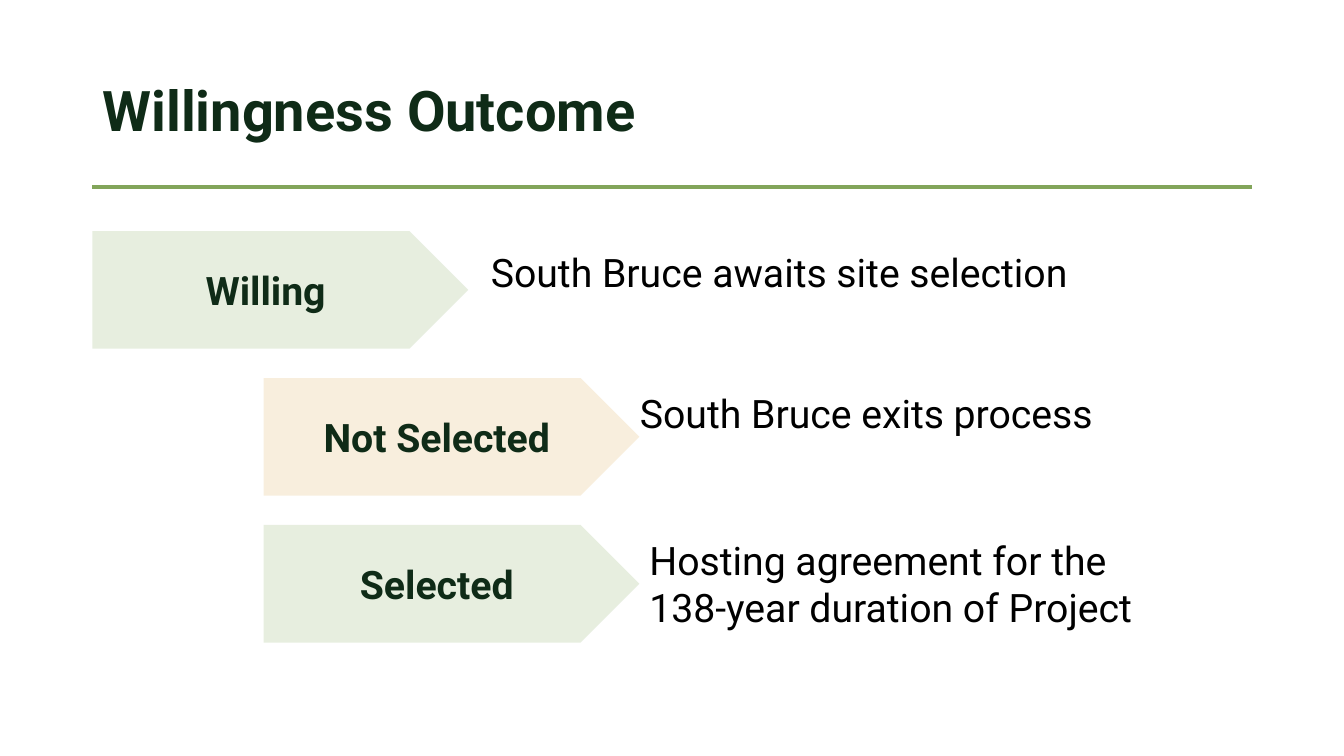
from lxml.etree import SubElement
from pptx import Presentation
from pptx.dml.color import RGBColor
from pptx.enum.shapes import MSO_CONNECTOR, MSO_SHAPE
from pptx.enum.text import MSO_ANCHOR, MSO_AUTO_SIZE, PP_ALIGN
from pptx.oxml.ns import qn
from pptx.util import Pt

PX = 9525
COLORS = {"dark": "0F2B17", "green": "82A55A", "gold": "DCA84E", "black": "000000"}


def color(name):
    return RGBColor.from_string(COLORS[name])


def style(para, size, name, bold, align):
    para.alignment = align
    para.font.name = "Roboto"
    para.font.size = Pt(size)
    para.font.bold = bold
    para.font.color.rgb = color(name)


deck = Presentation()
deck.slide_width, deck.slide_height = 1280 * PX, 720 * PX
slide = deck.slides.add_slide(deck.slide_layouts[5])
shapes = slide.shapes

rule = shapes.add_connector(MSO_CONNECTOR.STRAIGHT, 88 * PX, 178 * PX, 1192 * PX, 178 * PX)
rule.line.color.rgb = color("green")
rule.line.width = Pt(3)
SubElement(rule.element.spPr, qn("a:effectLst"))

title = shapes.title
title.left, title.top, title.width, title.height = 88 * PX, 38 * PX, 1104 * PX, 139 * PX
title.text_frame.text = "Willingness Outcome"
title.text_frame.vertical_anchor = MSO_ANCHOR.MIDDLE
head = title.text_frame.paragraphs[0]
head.line_spacing = 0.9
style(head, 40, "dark", True, PP_ALIGN.LEFT)

steps = [
    ("Willing", 88, "green", 458, 232, 55, "South Bruce awaits site selection"),
    ("Not Selected", 251, "gold", 600, 366, 55, "South Bruce exits process"),
    ("Selected", 251, "green", 609, 506, 100,
     "Hosting agreement for the\n138-year duration of Project"),
]
for row, (label, left, fill, x, y, high, words) in enumerate(steps):
    arrow = shapes.add_shape(
        MSO_SHAPE.PENTAGON, left * PX, (220 + 140 * row) * PX, 358 * PX, 112 * PX)
    arrow.shadow.inherit = False
    arrow.fill.solid()
    arrow.fill.fore_color.rgb = color(fill)
    tint = arrow.element.spPr.find(qn("a:solidFill"))[0]
    SubElement(tint, qn("a:alpha"), val="19000")
    arrow.line.fill.background()
    arrow.text_frame.text = label
    arrow.text_frame.vertical_anchor = MSO_ANCHOR.MIDDLE
    style(arrow.text_frame.paragraphs[0], 28, "dark", True, PP_ALIGN.CENTER)

    note = shapes.add_textbox(x * PX, y * PX, 612 * PX, high * PX).text_frame
    note.word_wrap = True
    note.auto_size = MSO_AUTO_SIZE.SHAPE_TO_FIT_TEXT
    note.text = words
    for para in note.paragraphs:
        style(para, 28, "black", False, PP_ALIGN.LEFT)

deck.save("out.pptx")
